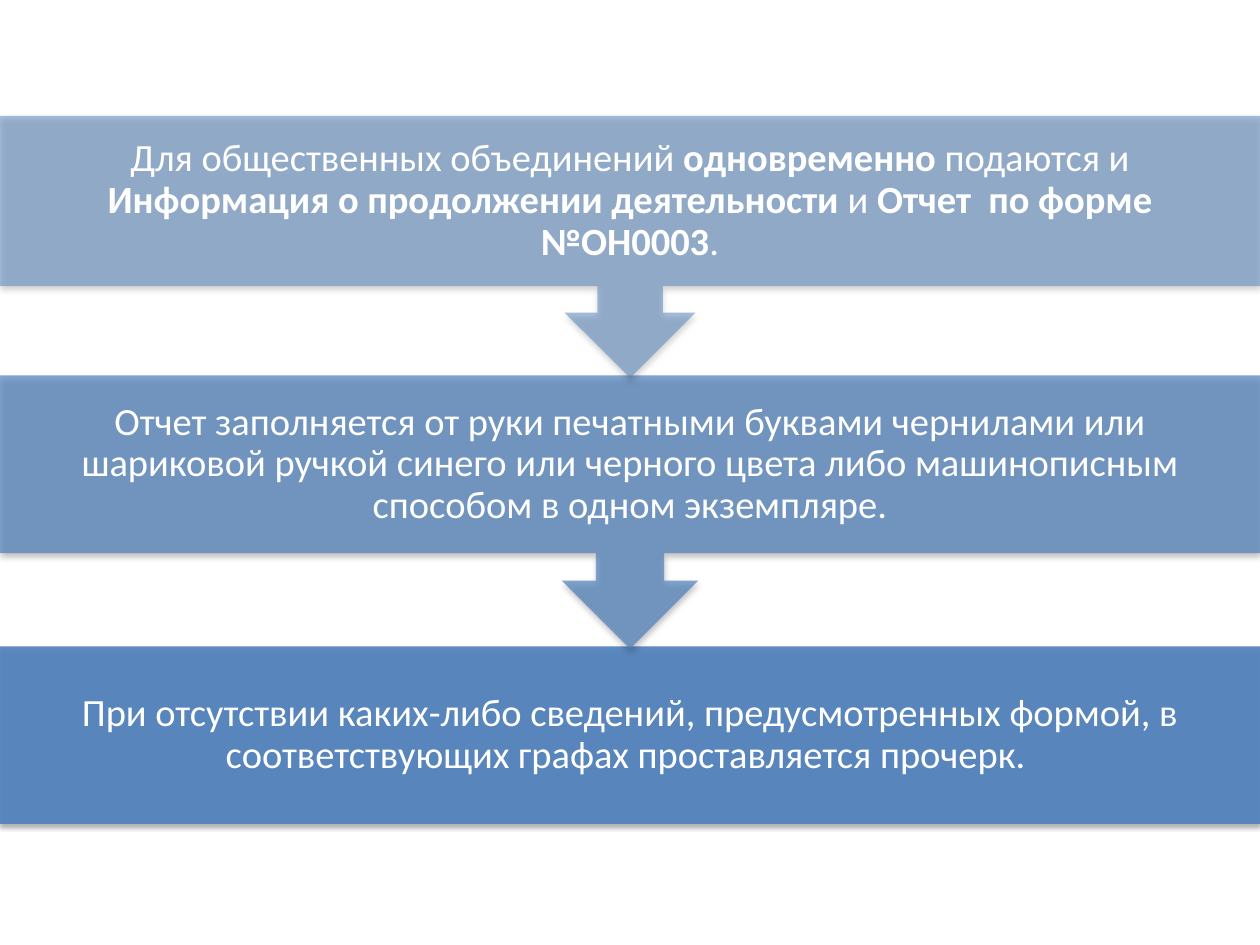
import lxml.etree
import pptx
import pptx.dml.color
import pptx.enum.shapes
import pptx.enum.text
import pptx.oxml.ns
import pptx.util

Inches = pptx.util.Inches
Kind = pptx.enum.shapes.MSO_SHAPE
COLORS = {"band": "4F81BD", "text": "FFFFFF", "shade": "000000"}
WIDTH = 10

# top, band height, full height with arrow, opacity in percent, (text, bold) runs
STEPS = [
    (0.92, 1.35, 2.08, 50, [
        ("Для общественных объединений ", False),
        ("одновременно", True),
        (" подаются и ", False),
        ("Информация о продолжении деятельности ", True),
        ("и ", False),
        ("Отчет  по форме №ОН0003", True),
        (".", False),
    ]),
    (2.98, 1.41, 2.17, 70, [
        ("Отчет заполняется от руки печатными буквами чернилами или шариковой "
         "ручкой синего или черного цвета либо машинописным способом в одном "
         "экземпляре.", False),
    ]),
    (5.13, 1.41, 1.41, 90, [
        ("При отсутствии каких-либо сведений, предусмотренных формой, в "
         "соответствующих графах проставляется прочерк. ", False),
    ]),
]


def color(name):
    return pptx.dml.color.RGBColor.from_string(COLORS[name])


def child(node, tag, **attrs):
    return lxml.etree.SubElement(node, pptx.oxml.ns.qn(tag), attrs)


def write(para, text, font="Calibri", size=22, bold=False, ink="text"):
    run = para.add_run()
    run.text = text
    run.font.name = font
    run.font.size = pptx.util.Pt(size)
    run.font.bold = bold
    run.font.color.rgb = color(ink)


class Deck:
    def __init__(self, slide, inset=0.17, lead=0.9):
        self.slide = slide
        self.inset = Inches(inset)
        self.lead = lead

    def band(self, top, height, alpha, kind, turn=0):
        """Add a see-through full-width band with a soft shadow."""
        shape = self.slide.shapes.add_shape(
            kind, 0, Inches(top), Inches(WIDTH), Inches(height))
        shape.rotation = turn
        shape.fill.solid()
        shape.fill.fore_color.rgb = color("band")
        shape.line.fill.background()
        props = shape.fill._xPr
        tint = props.find(".//" + pptx.oxml.ns.qn("a:srgbClr"))
        child(tint, "a:alpha", val=str(alpha * 1000))
        shape.shadow.inherit = False
        effects = props.find(pptx.oxml.ns.qn("a:effectLst"))
        shadow = child(effects, "a:outerShdw", blurRad="40000", dist="23000",
                       dir="5400000", rotWithShape="0")
        shade = child(shadow, "a:srgbClr", val=COLORS["shade"])
        child(shade, "a:alpha", val="35000")

    def text(self, top, height, runs):
        box = self.slide.shapes.add_textbox(
            0, Inches(top), Inches(WIDTH), Inches(height))
        frame = box.text_frame
        frame.word_wrap = True
        frame.vertical_anchor = pptx.enum.text.MSO_ANCHOR.MIDDLE
        frame.margin_left = frame.margin_right = self.inset
        frame.margin_top = frame.margin_bottom = self.inset
        para = frame.paragraphs[0]
        para.alignment = pptx.enum.text.PP_ALIGN.CENTER
        para.line_spacing = self.lead
        for words, bold in runs:
            write(para, words, bold=bold)


def main():
    show = pptx.Presentation()
    show.slide_width = Inches(WIDTH)
    show.slide_height = Inches(7.5)
    deck = Deck(show.slides.add_slide(show.slide_layouts[6]))
    # The lowest step goes first so that each arrow lies over the next band.
    for top, height, full, alpha, runs in reversed(STEPS):
        if full > height:
            deck.band(top, full, alpha, Kind.UP_ARROW_CALLOUT, turn=180)
        else:
            deck.band(top, full, alpha, Kind.RECTANGLE)
        deck.text(top, height, runs)
    show.save("out.pptx")


if __name__ == "__main__":
    main()
